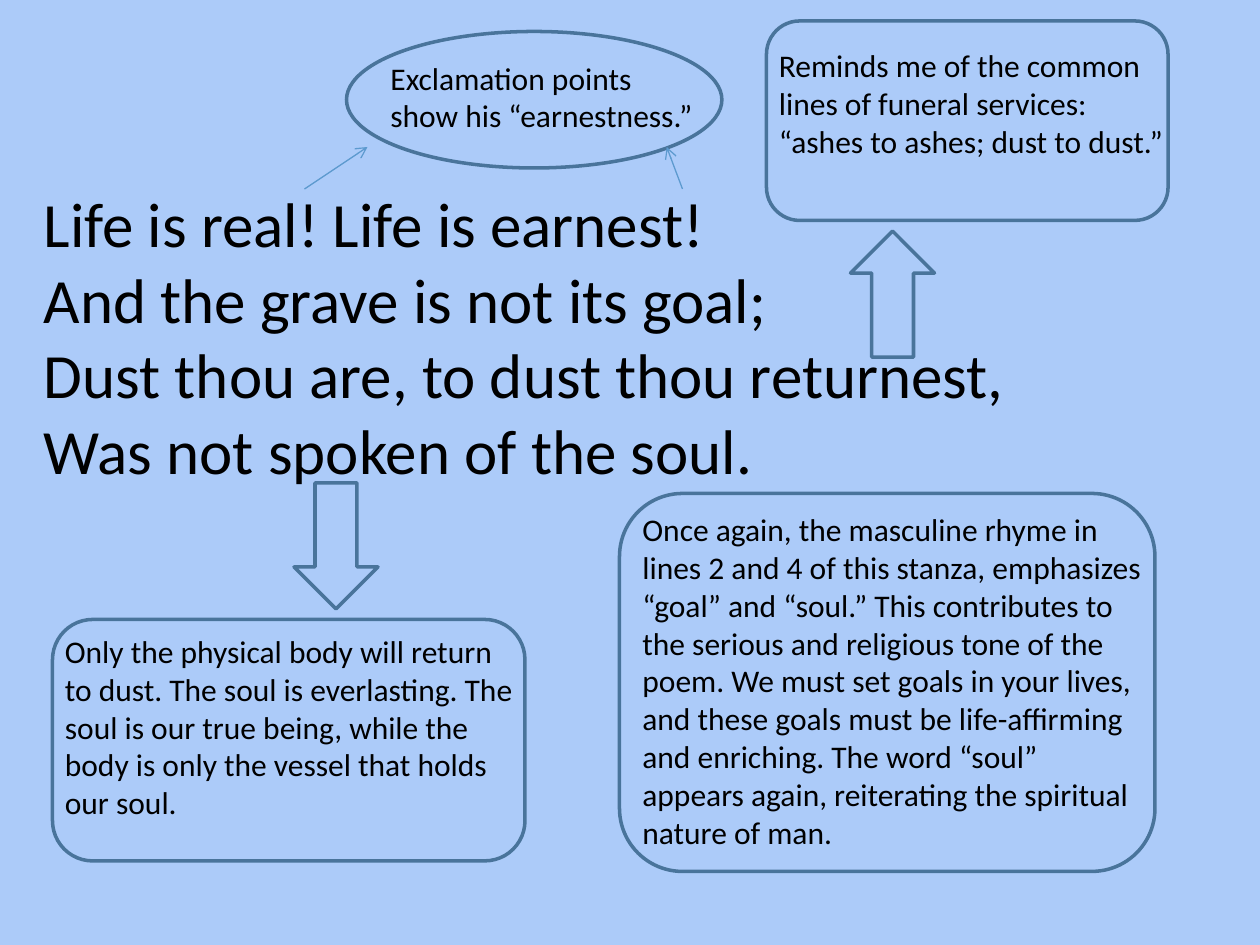
from lxml import etree
from pptx import Presentation
from pptx import util as u
from pptx.dml.color import RGBColor
from pptx.enum import shapes, text
from pptx.oxml.ns import qn

# The grid has 12 units to the inch: 120 columns by 90 rows
COLUMNS, ROWS = 120, 90
SKY, OUTLINE, POINTER, INK = "ACCBF9", "49749B", "5D9ACF", "000000"

STANZA = "\v".join([
    "Life is real! Life is earnest!",
    "And the grave is not its goal;",
    "Dust thou are, to dust thou returnest,",
    "Was not spoken of the soul.",
])
EARNEST = "Exclamation points show his “earnestness.”"
FUNERAL = ("Reminds me of the common lines of funeral services: "
           "“ashes to ashes; dust to dust.”")
BODY = ("Only the physical body will return to dust. The soul is everlasting. "
        "The soul is our true being, while the body is only the vessel that "
        "holds our soul.")
RHYME = ("Once again, the masculine rhyme in lines 2 and 4 of this stanza, "
         "emphasizes “goal” and “soul.” This contributes to the serious and "
         "religious tone of the poem. We must set goals in your lives, and "
         "these goals must be life-affirming and enriching. The word “soul” "
         "appears again, reiterating the spiritual nature of man.")


def color(hex_string):
    return RGBColor.from_string(hex_string)


def grid(*units):
    return [u.Inches(unit / 12) for unit in units]


def add_text(parent, box, words, size=18, font="Calibri", ink=INK):
    frame = parent.add_textbox(*grid(*box)).text_frame
    frame.word_wrap = True
    frame.auto_size = text.MSO_AUTO_SIZE.NONE
    frame.text = words
    for run in frame.paragraphs[0].runs:
        run.font.size = u.Pt(size)
        run.font.name = font
        run.font.color.rgb = color(ink)


def add_outline(parent, kind, box, rotation=0):
    outline = parent.add_shape(kind, *grid(*box))
    outline.shadow.inherit = False
    outline.fill.background()
    outline.line.color.rgb = color(OUTLINE)
    outline.line.width = u.Pt(2)
    outline.rotation = rotation


def add_pointer(parent, start, end):
    pointer = parent.add_connector(shapes.MSO_CONNECTOR.STRAIGHT,
                                   *grid(*start, *end))
    pointer.line.color.rgb = color(POINTER)
    pointer.line.width = u.Pt(0.75)
    etree.SubElement(pointer.line._get_or_add_ln(), qn("a:tailEnd"), type="arrow")
    etree.SubElement(pointer._element.spPr, qn("a:effectLst"))


def add_note(slide, box, words, inset, kind=shapes.MSO_SHAPE.ROUNDED_RECTANGLE,
             pointers=()):
    """Group an outlined comment; inset is the text box's offset and size change."""
    note = slide.shapes.add_group_shape().shapes
    add_text(note, [edge + change for edge, change in zip(box, inset)], words)
    add_outline(note, kind, box)
    for start, end in pointers:
        add_pointer(note, start, end)


def add_block_arrow(slide, box, rotation=0):
    add_outline(slide.shapes, shapes.MSO_SHAPE.DOWN_ARROW, box, rotation)


def main():
    deck = Presentation()
    deck.slide_width, deck.slide_height = grid(COLUMNS, ROWS)
    slide = deck.slides.add_slide(deck.slide_layouts[6])
    slide.background.fill.solid()
    slide.background.fill.fore_color.rgb = color(SKY)

    # Stanza
    add_text(slide.shapes, (3, 17, 107, 37.5), STANZA, size=36)

    # Comments above the stanza
    add_note(slide, (33, 3, 35.75, 13), EARNEST, (3, 2, -3.75, -4.5),
             kind=shapes.MSO_SHAPE.OVAL,
             pointers=[((29, 18), (35, 14)), ((65, 18), (63.5, 14))])
    add_note(slide, (73, 2, 38.25, 19), FUNERAL, (0, 1.8, 0.75, -3))

    # Comment on the body
    add_note(slide, (5, 59, 45, 23), BODY, (0, 0.6, 1, -3.5))

    # Arrows from the stanza to its comments
    add_block_arrow(slide, (81, 22, 8, 12), rotation=180)
    add_block_arrow(slide, (28, 46, 8, 12))

    # Comment on the rhyme
    add_note(slide, (59, 47, 51, 36), RHYME, (1, 1, -1, -2))

    deck.save("out.pptx")


if __name__ == "__main__":
    main()
